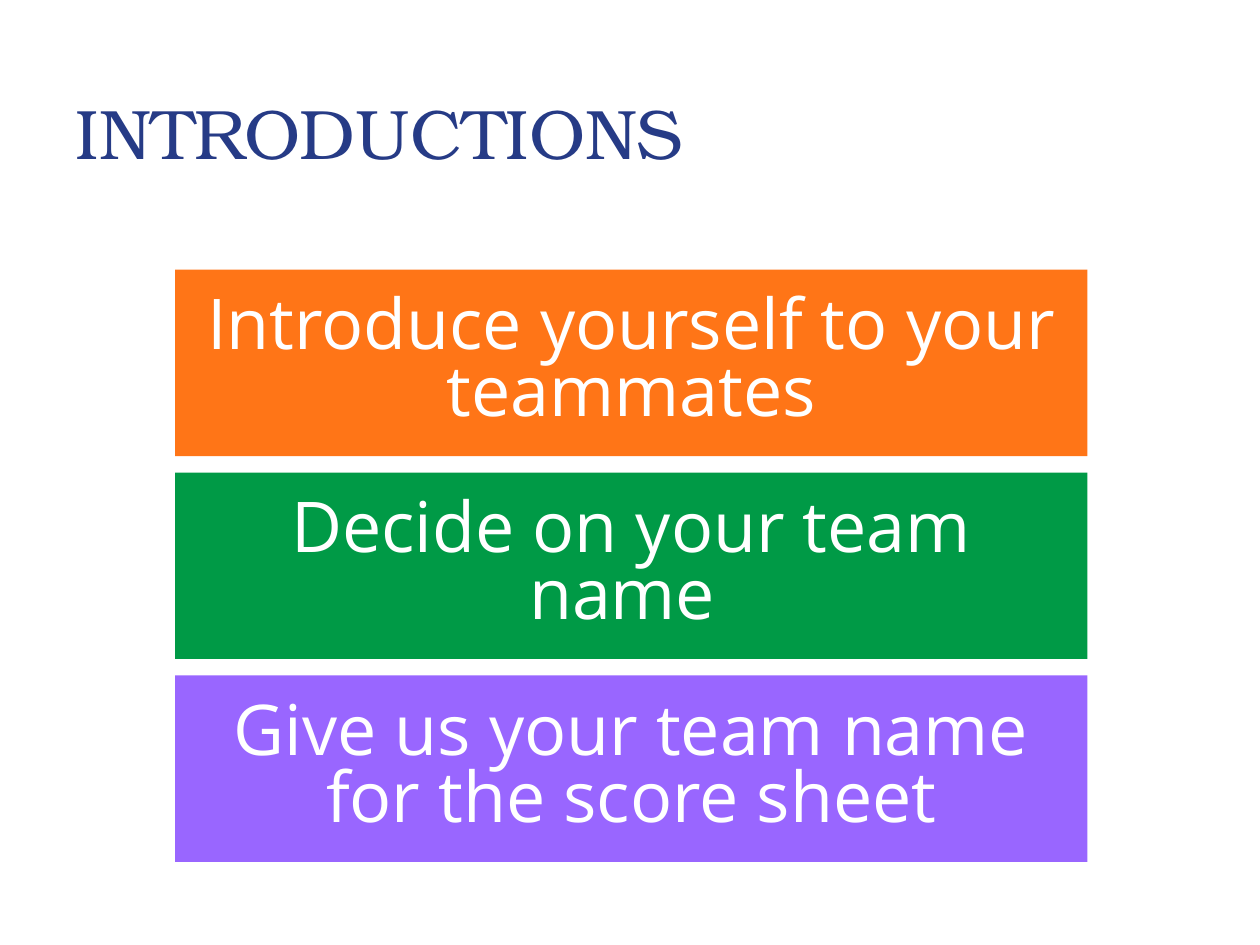
from dataclasses import dataclass

import pptx
import pptx.dml.color
import pptx.enum.shapes
import pptx.enum.text
import pptx.util
from pptx.util import Inches

Align = pptx.enum.text.PP_ALIGN
Anchor = pptx.enum.text.MSO_ANCHOR


@dataclass(frozen=True)
class Theme:
    title_font: str = "TeX Gyre Bonum"
    body_font: str = "Open Sans"
    text_size: int = 40
    title_color: str = "263B86"
    step_text_color: str = "FFFFFF"
    step_fills: tuple = ("FF7517", "009A46", "9966FF")


THEME = Theme()
STEPS = (
    "Introduce yourself to your teammates",
    "Decide on your team name ",
    "Give us your team name for the score sheet",
)
STEP_LEFT, STEP_TOP, STEP_WIDTH, STEP_HEIGHT = 1.39, 2.14, 7.24, 1.48
STEP_PITCH = 1.61


def rgb(value):
    return pptx.dml.color.RGBColor.from_string(value)


def write_text(shape, text, *, font, color, align, anchor,
               margins=(0.1, 0.05), line_spacing=1.0):
    """Fill a shape with one formatted paragraph; margins are (sides, top and bottom)."""
    frame = shape.text_frame
    frame.word_wrap = True
    frame.auto_size = pptx.enum.text.MSO_AUTO_SIZE.NONE
    frame.vertical_anchor = anchor
    frame.margin_left = frame.margin_right = Inches(margins[0])
    frame.margin_top = frame.margin_bottom = Inches(margins[1])
    paragraph = frame.paragraphs[0]
    paragraph.alignment = align
    paragraph.line_spacing = line_spacing
    run = paragraph.add_run()
    run.text = text
    run.font.name = font
    run.font.size = pptx.util.Pt(THEME.text_size)
    run.font.color.rgb = rgb(color)


def add_title(slide, text):
    title = slide.shapes.title
    title.left, title.top = Inches(0.5), Inches(0.17)
    title.width, title.height = Inches(6.33), Inches(1.26)
    write_text(title, text, font=THEME.title_font, color=THEME.title_color,
               align=Align.LEFT, anchor=Anchor.BOTTOM)


def add_step(slide, text, top, fill):
    step = slide.shapes.add_shape(
        pptx.enum.shapes.MSO_SHAPE.RECTANGLE,
        Inches(STEP_LEFT), Inches(top), Inches(STEP_WIDTH), Inches(STEP_HEIGHT))
    step.shadow.inherit = False
    step.fill.solid()
    step.fill.fore_color.rgb = rgb(fill)
    step.line.fill.background()
    write_text(step, text, font=THEME.body_font, color=THEME.step_text_color,
               align=Align.CENTER, anchor=Anchor.MIDDLE,
               margins=(0.17, 0.17), line_spacing=0.8)


def main():
    presentation = pptx.Presentation()
    presentation.slide_width, presentation.slide_height = Inches(10), Inches(7.5)
    title_only = presentation.slide_layouts.get_by_name("Title Only")
    slide = presentation.slides.add_slide(title_only)
    add_title(slide, "INTRODUCTIONS")
    for index, (text, fill) in enumerate(zip(STEPS, THEME.step_fills)):
        add_step(slide, text, STEP_TOP + index * STEP_PITCH, fill)
    presentation.save("out.pptx")


if __name__ == "__main__":
    main()
